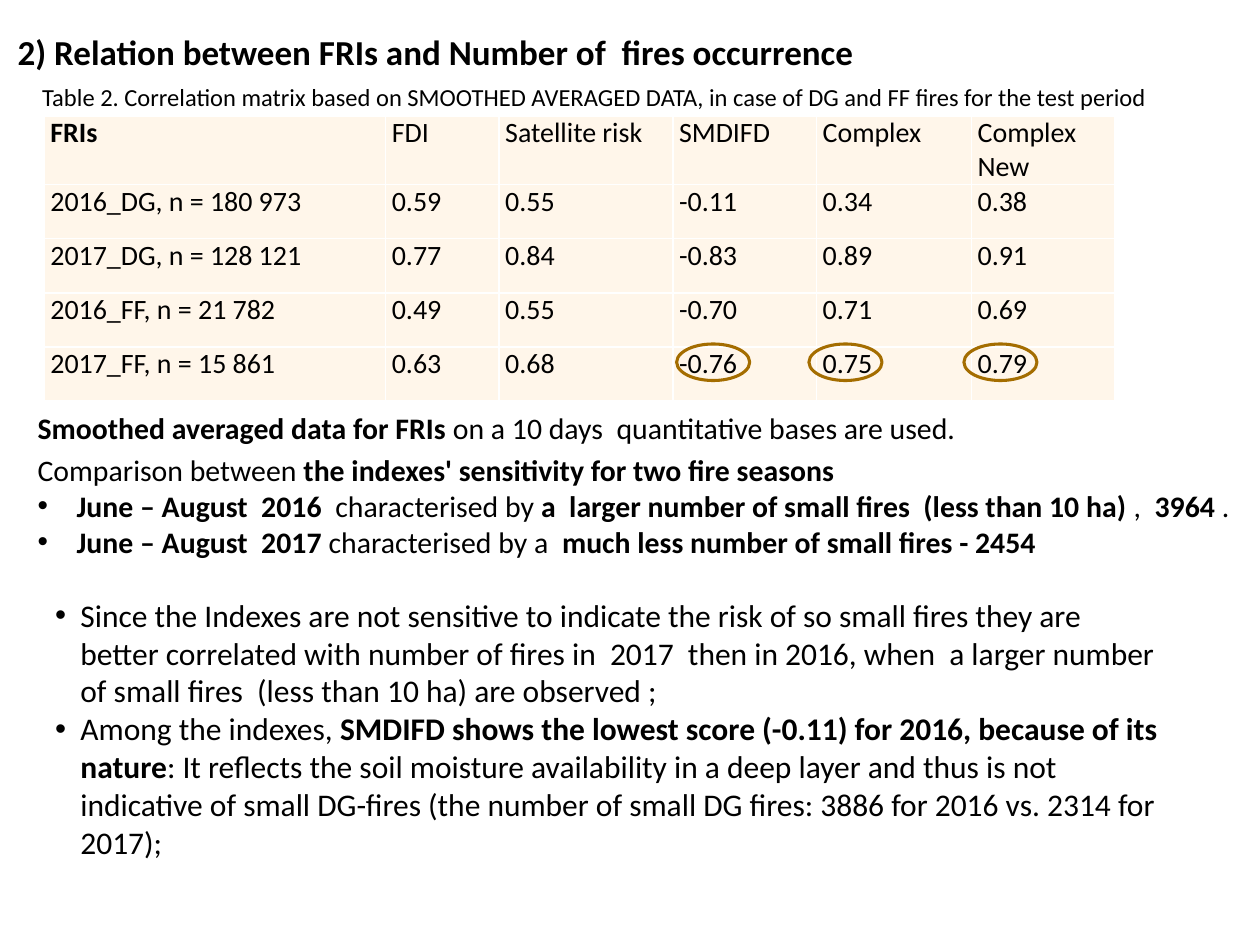
import pptx
import pptx.dml.color
import pptx.enum.shapes
import pptx.enum.text
import pptx.oxml
import pptx.oxml.ns
import pptx.util

Inches, Pt = pptx.util.Inches, pptx.util.Pt
RGBColor = pptx.dml.color.RGBColor
ANCHOR = pptx.enum.text.MSO_ANCHOR
ALIGN = pptx.enum.text.PP_ALIGN

BLACK = RGBColor(0x00, 0x00, 0x00)
WHITE = RGBColor(0xFF, 0xFF, 0xFF)
CREAM = RGBColor(0xFF, 0xF6, 0xEA)
OCHRE = RGBColor(0xA4, 0x6D, 0x00)
FONT = "Calibri"

TITLE = "2) Relation between FRIs and Number of  fires occurrence"
CAPTION = ("Table 2. Correlation matrix based on SMOOTHED AVERAGED DATA, "
           "in case of DG and FF fires for the test period")
CORRELATIONS = [
    ("FRIs", "FDI", "Satellite risk", "SMDIFD", "Complex", "Complex New"),
    ("2016_DG, n = 180 973", "0.59", "0.55", "-0.11", "0.34", "0.38"),
    ("2017_DG, n = 128 121", "0.77", "0.84", "-0.83", "0.89", "0.91"),
    ("2016_FF, n = 21 782", "0.49", "0.55", "-0.70", "0.71", "0.69"),
    ("2017_FF, n = 15 861", "0.63", "0.68", "-0.76", "0.75", "0.79"),
]
TABLE_LEFT, TABLE_TOP = 0.35, 0.92
COLUMN_WIDTHS = (2.71, 0.9, 1.38, 1.14, 1.23, 1.14)
HEADER_HEIGHT, ROW_HEIGHT = 0.47, 0.43

# Circled values of the last row: column -> shift from the column's left edge
CIRCLED = {3: 0.03, 4: -0.06, 5: -0.06}
CIRCLE_TOP, CIRCLE_WIDTH, CIRCLE_HEIGHT = 2.73, 0.58, 0.29

# Each paragraph is a list of (text, bold) runs
SEASON_INTRO = [
    [("Smoothed averaged data for FRIs ", True),
     ("on a 10 days  quantitative bases are used.", False)],
    [("Comparison between ", False),
     ("the indexes' sensitivity for two fire seasons", True)],
]
SEASONS = [
    [("June – August  2016  ", True), ("characterised by ", False),
     ("a  larger number of small fires  (less than 10 ha) ", True),
     (",  ", False), ("3964 ", True), (".", False)],
    [("June – August  2017 ", True), ("characterised by a  ", False),
     ("much less number of small fires - 2454", True)],
]
CONCLUSIONS = [
    [("Since the Indexes are not sensitive to indicate the risk of so small "
      "fires they are better correlated with number of fires in  2017  then "
      "in 2016, when  a larger number of small fires  (less than 10 ha) are "
      "observed ;", False)],
    [("Among the indexes, ", False),
     ("SMDIFD shows the lowest score (-0.11) for 2016, because of its nature",
      True),
     (": It reflects the soil moisture availability in a deep layer and thus "
      "is not indicative of small DG-fires (the number of small DG fires: "
      "3886 for 2016 vs. 2314 for 2017);", False)],
]


def style(paragraph, size, bold=None):
    font = paragraph.font
    font.name, font.size, font.bold = FONT, Pt(size), bold
    font.color.rgb = BLACK


def add_bullet(paragraph, indent):
    properties = paragraph._p.get_or_add_pPr()
    properties.set("marL", str(Inches(indent)))
    properties.set("indent", str(-Inches(indent)))
    namespace = pptx.oxml.ns.nsdecls("a")
    for tag in ('a:buFont {} typeface="Arial"', 'a:buChar {} char="•"'):
        bullet = pptx.oxml.parse_xml(f"<{tag.format(namespace)}/>")
        properties.insert_element_before(bullet, "a:tabLst", "a:defRPr", "a:extLst")


def add_text(slide, box, paragraphs, size, bullets_from=0, indent=0.0):
    """Add a text box whose paragraphs from bullets_from onwards are bulleted."""
    frame = slide.shapes.add_textbox(*map(Inches, box)).text_frame
    frame.word_wrap = True
    for number, runs in enumerate(paragraphs):
        paragraph = frame.add_paragraph() if number else frame.paragraphs[0]
        style(paragraph, size)
        for text, bold in runs:
            run = paragraph.add_run()
            run.text, run.font.bold = text, bold
        if indent and number >= bullets_from:
            add_bullet(paragraph, indent)
    return frame


def add_borders(cell):
    properties = cell._tc.get_or_add_tcPr()
    for position, side in enumerate(("lnL", "lnR", "lnT", "lnB")):
        border = pptx.oxml.parse_xml(
            f'<a:{side} {pptx.oxml.ns.nsdecls("a")} w="{Pt(1)}"><a:solidFill>'
            f'<a:srgbClr val="{WHITE}"/></a:solidFill></a:{side}>')
        properties.insert(position, border)


def add_correlation_table(slide):
    heights = [HEADER_HEIGHT] + [ROW_HEIGHT] * (len(CORRELATIONS) - 1)
    table = slide.shapes.add_table(
        len(heights), len(COLUMN_WIDTHS), Inches(TABLE_LEFT), Inches(TABLE_TOP),
        Inches(sum(COLUMN_WIDTHS)), Inches(sum(heights))).table
    for column, width in zip(table.columns, COLUMN_WIDTHS):
        column.width = Inches(width)
    for r, (height, values) in enumerate(zip(heights, CORRELATIONS)):
        table.rows[r].height = Inches(height)
        for c, value in enumerate(values):
            cell = table.cell(r, c)
            cell.text = value
            cell.fill.solid()
            cell.fill.fore_color.rgb = CREAM
            cell.margin_left = cell.margin_right = Inches(0.05)
            cell.margin_top = cell.margin_bottom = 0
            paragraph = cell.text_frame.paragraphs[0]
            paragraph.space_before = paragraph.space_after = Pt(6)
            style(paragraph, 16, bold=(r == c == 0))
            add_borders(cell)


def circle_values(slide):
    for column, shift in CIRCLED.items():
        left = TABLE_LEFT + sum(COLUMN_WIDTHS[:column]) + shift
        circle = slide.shapes.add_shape(
            pptx.enum.shapes.MSO_SHAPE.OVAL, Inches(left), Inches(CIRCLE_TOP),
            Inches(CIRCLE_WIDTH), Inches(CIRCLE_HEIGHT))
        circle.shadow.inherit = False
        circle.fill.background()
        circle.line.color.rgb = OCHRE
        circle.line.width = Pt(1.75)


def main():
    deck = pptx.Presentation()
    deck.slide_width, deck.slide_height = Inches(10), Inches(7.5)
    slide = deck.slides.add_slide(deck.slide_layouts.get_by_name("Title Only"))

    title = slide.shapes.title
    title.left, title.top, title.width, title.height = map(
        Inches, (0.04, 0.05, 8.43, 0.72))
    title.text_frame.text = TITLE
    title.text_frame.vertical_anchor = ANCHOR.MIDDLE
    heading = title.text_frame.paragraphs[0]
    heading.alignment = ALIGN.LEFT
    style(heading, 20, bold=True)

    add_correlation_table(slide)
    caption = add_text(slide, (-0.28, 0.6, 10, 0.34), [[(CAPTION, False)]], 14)
    caption.paragraphs[0].alignment = ALIGN.CENTER
    seasons = add_text(slide, (0.2, 3.2, 9.81, 1.3), SEASON_INTRO + SEASONS, 17,
                       bullets_from=len(SEASON_INTRO), indent=0.31)
    seasons.paragraphs[0].space_after = Pt(3.9)
    circle_values(slide)
    add_text(slide, (0.34, 4.68, 9, 2.22), CONCLUSIONS, 18, indent=0.2)

    deck.save("out.pptx")


if __name__ == "__main__":
    main()
